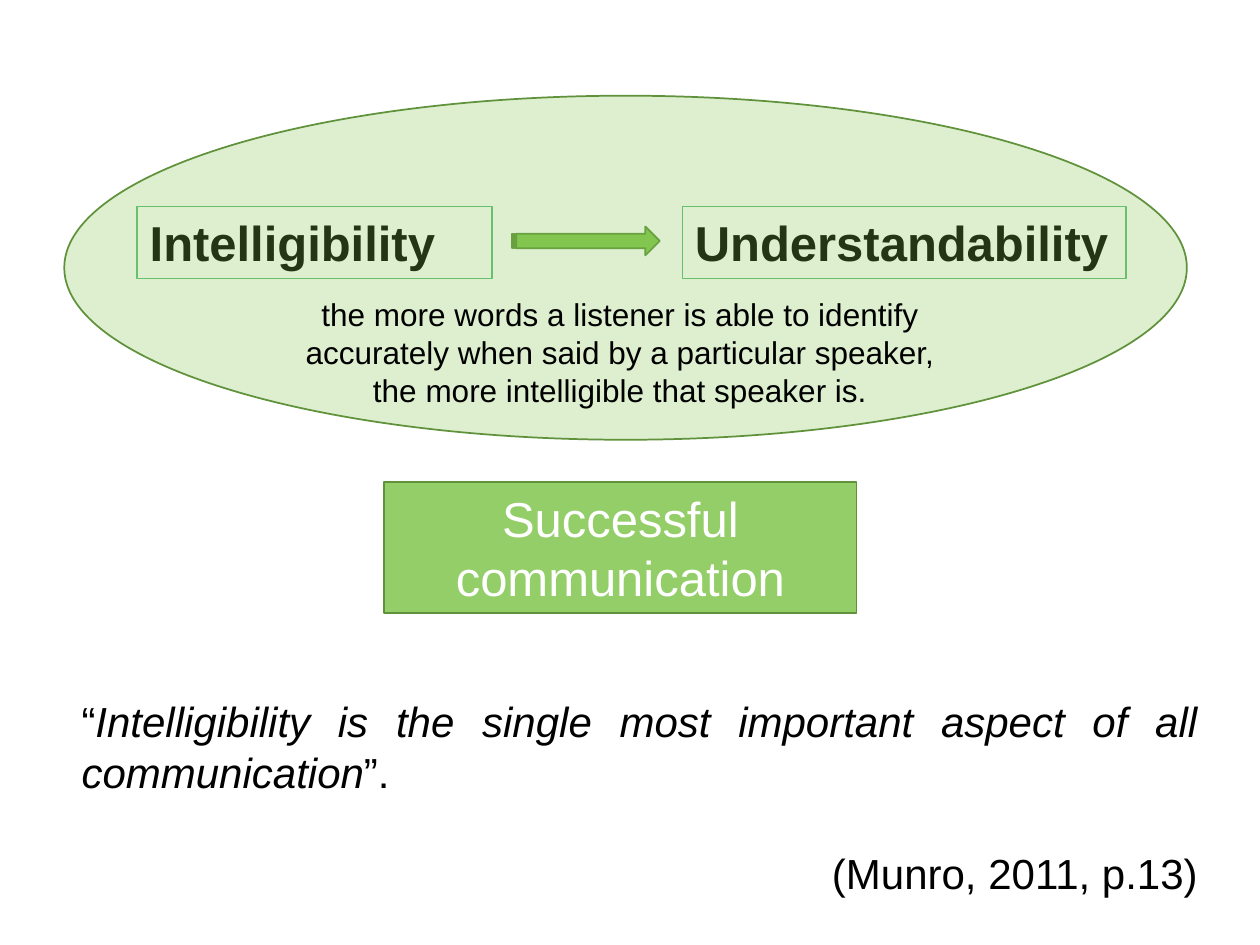
import pptx
import pptx.dml.color
import pptx.enum.shapes
import pptx.enum.text
import pptx.oxml.ns
import pptx.util
from lxml import etree

Pt = pptx.util.Pt
RGBColor = pptx.dml.color.RGBColor
SHAPE = pptx.enum.shapes.MSO_SHAPE
ALIGN = pptx.enum.text.PP_ALIGN
ANCHOR = pptx.enum.text.MSO_ANCHOR

FONT = "Arial"
BLACK = RGBColor(0x00, 0x00, 0x00)
WHITE = RGBColor(0xFF, 0xFF, 0xFF)
GREEN = RGBColor(0x82, 0xC6, 0x50)
DARK_GREEN = RGBColor(0x60, 0x92, 0x3B)
MINT = RGBColor(0x5C, 0xBE, 0x7A)

# Each paragraph is a list of (text, style) runs.
CONCEPTS = [
    ("Intelligibility", 78.5, 202.5),
    ("Understandability", 390, 253.5),
]
OUTCOME = [[("Successful communication", "")]]
EXPLANATION = [
    [("the more words a listener is able to identify accurately "
      "when said by a particular speaker,", "")],
    [("the more intelligible that speaker is.", "")],
]
QUOTE = [
    [("“", ""),
     ("Intelligibility is the single most important aspect of all communication", "italic"),
     ("”.", "")],
    [("(Munro, 2011, p.13)", "")],
]

presentation = pptx.Presentation()
presentation.slide_width, presentation.slide_height = Pt(720), Pt(540)
slide = presentation.slides.add_slide(presentation.slide_layouts[6])


def add_shape(kind, box, fill, line, opacity=100):
    shape = slide.shapes.add_shape(kind, *map(Pt, box))
    shape.shadow.inherit = False
    shape.fill.solid()
    shape.fill.fore_color.rgb = fill
    shape.line.color.rgb = line
    shape.line.width = Pt(1)
    if opacity < 100:
        color = shape.fill._xPr.find(".//" + pptx.oxml.ns.qn("a:srgbClr"))
        etree.SubElement(color, pptx.oxml.ns.qn("a:alpha"), val=str(opacity * 1000))
    return shape


def write(shape, paragraphs, size, alignments, color=BLACK, anchor=ANCHOR.TOP):
    frame = shape.text_frame
    frame.word_wrap = True
    frame.vertical_anchor = anchor
    for index, (runs, alignment) in enumerate(zip(paragraphs, alignments)):
        paragraph = frame.add_paragraph() if index else frame.paragraphs[0]
        paragraph.alignment = alignment
        for text, style in runs:
            run = paragraph.add_run()
            run.text = text
            run.font.name = FONT
            run.font.size = Pt(size)
            run.font.color.rgb = color
            run.font.bold = style == "bold"
            run.font.italic = style == "italic"
    return frame


add_shape(SHAPE.STRIPED_RIGHT_ARROW, (292.5, 129.5, 84.5, 16.5), GREEN, DARK_GREEN)

for concept, left, width in CONCEPTS:
    box = add_shape(SHAPE.RECTANGLE, (left, 118, width, 41.2), WHITE, MINT)
    write(box, [[(concept, "bold")]], 28, [ALIGN.LEFT])

add_shape(SHAPE.OVAL, (36.7, 54.7, 641.5, 196.6), GREEN, DARK_GREEN, 27)

outcome_box = add_shape(SHAPE.RECTANGLE, (219.5, 275.5, 270, 75), GREEN, DARK_GREEN, 86)
write(outcome_box, OUTCOME, 28, [ALIGN.CENTER], WHITE, ANCHOR.MIDDLE)

quote_box = slide.shapes.add_textbox(*map(Pt, (39.5, 394, 652, 124)))
quote_frame = write(quote_box, QUOTE, 24, [ALIGN.JUSTIFY, ALIGN.RIGHT])
quote_frame.paragraphs[1].space_before = Pt(29)

explanation_box = slide.shapes.add_textbox(*map(Pt, (167, 165, 374.5, 72.7)))
write(explanation_box, EXPLANATION, 18, [ALIGN.CENTER] * 2)

presentation.save("out.pptx")
